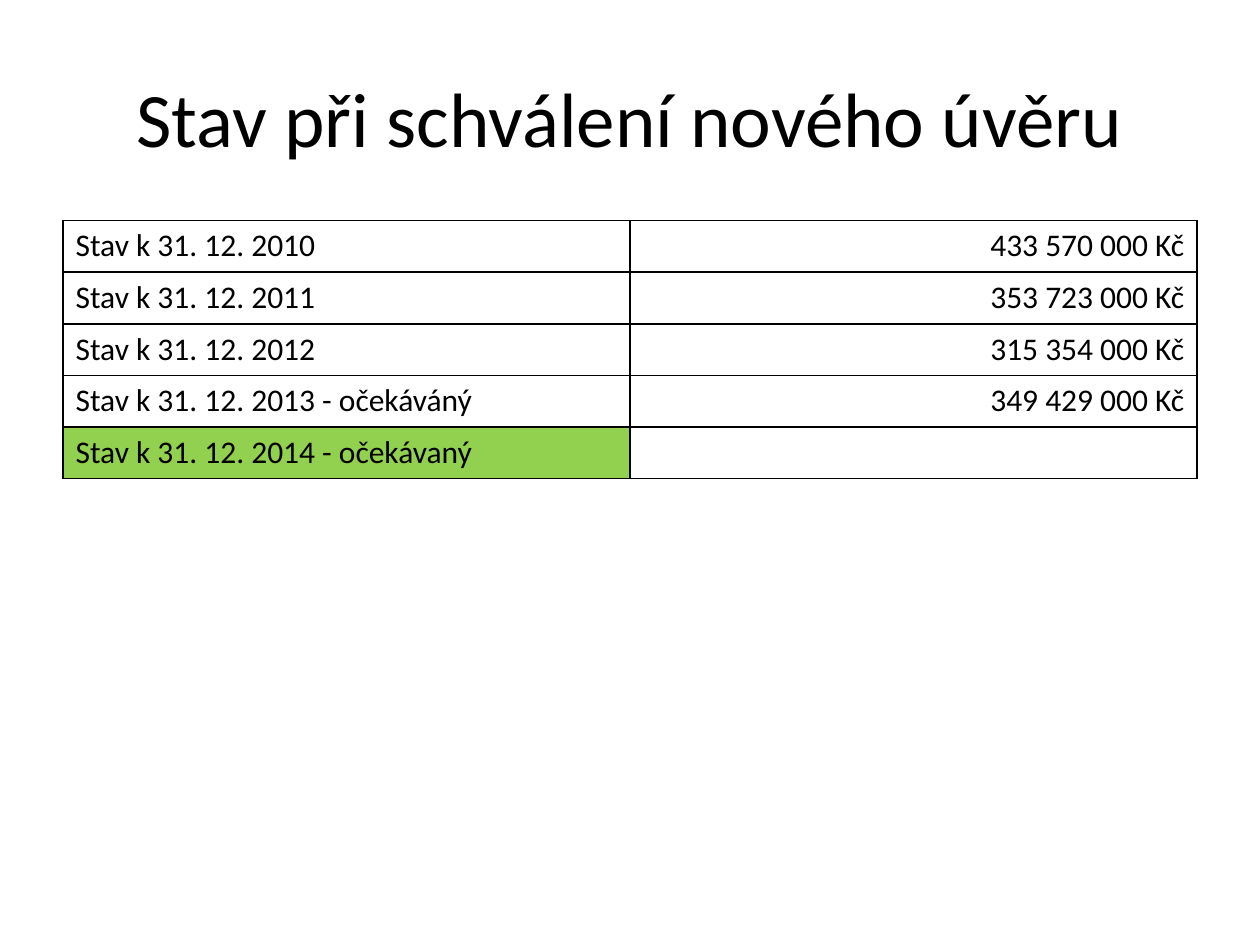
import lxml.etree
import pptx
import pptx.dml.color
import pptx.enum.text
import pptx.oxml.ns
import pptx.util

Inches = pptx.util.Inches
ALIGN = pptx.enum.text.PP_ALIGN
ANCHOR = pptx.enum.text.MSO_ANCHOR
BLACK = "000000"
GREEN = "92D050"
BALANCES = [
    ("Stav k 31. 12. 2010", "433 570 000 Kč"),
    ("Stav k 31. 12. 2011", "353 723 000 Kč"),
    ("Stav k 31. 12. 2012", "315 354 000 Kč"),
    ("Stav k 31. 12. 2013 - očekáváný", "349 429 000 Kč"),
    ("Stav k 31. 12. 2014 - očekávaný", ""),
]


def color(value):
    return pptx.dml.color.RGBColor.from_string(value)


def write_text(tf, text, size, align):
    p = tf.paragraphs[0]
    p.alignment = align
    if not text:
        return
    r = p.add_run()
    r.text = text
    for name, value in {"name": "Calibri", "size": pptx.util.Pt(size)}.items():
        setattr(r.font, name, value)
    r.font.color.rgb = color(BLACK)


def add_title(s, text):
    sp = s.shapes.add_textbox(Inches(0.5), Inches(0.3), Inches(9), Inches(1.25))
    tf = sp.text_frame
    for name, value in {"word_wrap": True, "vertical_anchor": ANCHOR.MIDDLE}.items():
        setattr(tf, name, value)
    write_text(tf, text, 44, ALIGN.CENTER)


def set_borders(cell, value, width):
    tc_pr = cell._tc.get_or_add_tcPr()
    qn = pptx.oxml.ns.qn
    for i, side in enumerate(("lnL", "lnR", "lnT", "lnB")):
        ln = lxml.etree.Element(qn(f"a:{side}"), w=str(pptx.util.Pt(width)))
        fill = lxml.etree.SubElement(ln, qn("a:solidFill"))
        lxml.etree.SubElement(fill, qn("a:srgbClr"), val=value)
        tc_pr.insert(i, ln)


def set_fill(cell, value):
    if value:
        cell.fill.solid()
        cell.fill.fore_color.rgb = color(value)
    else:
        cell.fill.background()


def add_balance_table(s, rows):
    row_height = Inches(0.41)
    frame = s.shapes.add_table(len(rows), 2, Inches(0.5), Inches(1.75),
                               Inches(9), row_height * len(rows))
    table = frame.table
    for name in ("first_row", "horz_banding"):
        setattr(table, name, False)
    for i, row in enumerate(rows):
        table.rows[i].height = row_height
        for j, (text, align) in enumerate(zip(row, (ALIGN.LEFT, ALIGN.RIGHT))):
            cell = table.cell(i, j)
            write_text(cell.text_frame, text, 18, align)
            is_latest_label = i == len(rows) - 1 and j == 0
            set_fill(cell, GREEN if is_latest_label else None)
            set_borders(cell, BLACK, 1)


def main():
    prs = pptx.Presentation()
    prs.slide_width = Inches(10)
    prs.slide_height = Inches(7.5)
    s = prs.slides.add_slide(prs.slide_layouts[6])
    add_title(s, "Stav při schválení nového úvěru")
    add_balance_table(s, BALANCES)
    prs.save("out.pptx")


if __name__ == "__main__":
    main()
